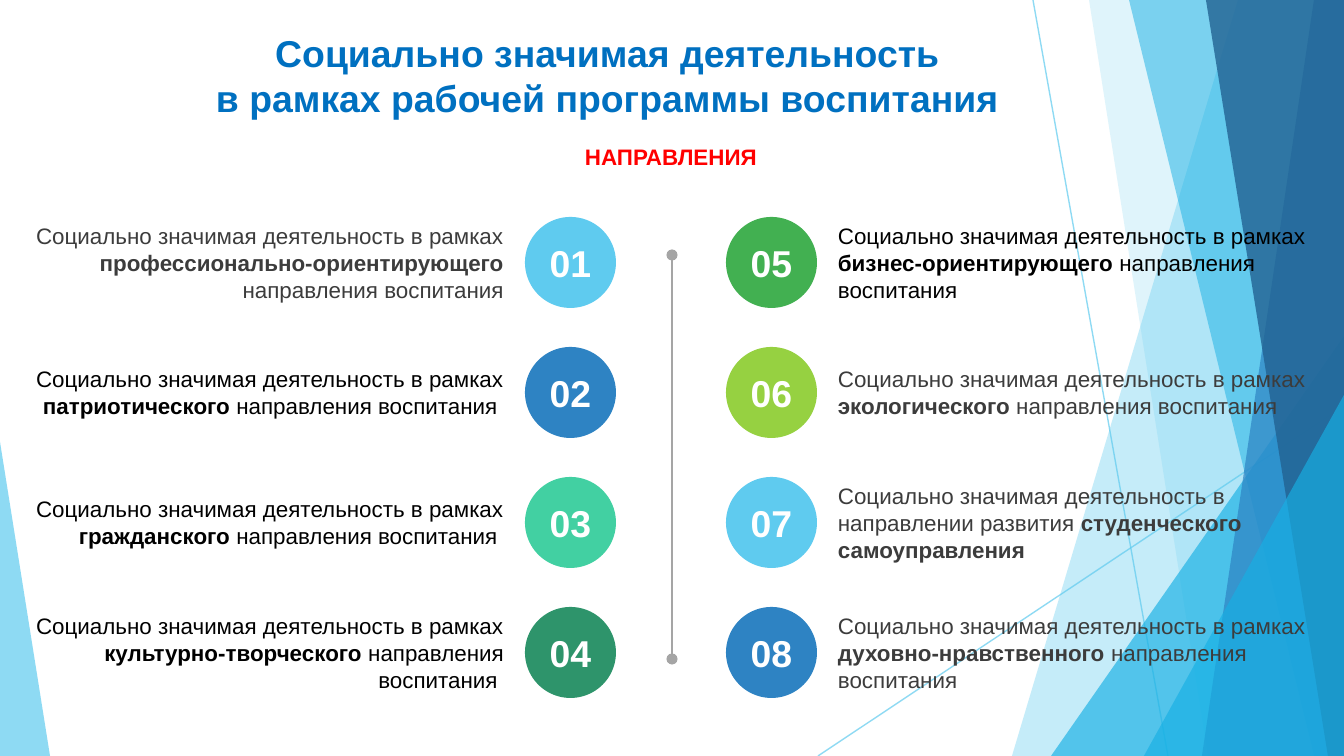
from lxml.etree import SubElement
from pptx import Presentation
from pptx.dml.color import RGBColor
from pptx.enum.shapes import MSO_CONNECTOR, MSO_SHAPE
from pptx.enum.text import MSO_ANCHOR, PP_ALIGN as ALIGN
from pptx.oxml.ns import qn
from pptx.util import Emu, Pt

SKY = RGBColor(0x5F, 0xCB, 0xEF)
CYAN = RGBColor(0x17, 0xB0, 0xE4)
BLUE = RGBColor(0x2E, 0x83, 0xC3)
NAVY = RGBColor(0x22, 0x62, 0x92)
MINT = RGBColor(0x42, 0xD0, 0xA2)
PINE = RGBColor(0x2E, 0x94, 0x6B)
GREEN = RGBColor(0x42, 0xB0, 0x51)
LIME = RGBColor(0x96, 0xD1, 0x41)
TITLE_BLUE = RGBColor(0x00, 0x70, 0xC0)
RED = RGBColor(0xFF, 0x00, 0x00)
GRAY = RGBColor(0xA5, 0xA5, 0xA5)
DARK = RGBColor(0x3C, 0x3C, 0x3C)
BLACK = RGBColor(0x00, 0x00, 0x00)
WHITE = RGBColor(0xFF, 0xFF, 0xFF)

WIDTH, HEIGHT = 1344, 756
FONT = "Arial"

TITLE = "Социально значимая деятельность\vв рамках рабочей программы воспитания"
SUBTITLE = "НАПРАВЛЕНИЯ"
LEAD = "Социально значимая деятельность в рамках "
TAIL = " направления воспитания"

# circle colour, text colour, opening words, bold words, closing words
DIRECTIONS = [
    (SKY, DARK, LEAD, "профессионально-ориентирующего", TAIL),
    (BLUE, BLACK, LEAD, "патриотического", TAIL + " "),
    (MINT, BLACK, LEAD, "гражданского", TAIL + " "),
    (PINE, BLACK, LEAD, "культурно-творческого", TAIL + " "),
    (GREEN, BLACK, LEAD, "бизнес-ориентирующего", TAIL),
    (LIME, DARK, LEAD, "экологического", TAIL),
    (SKY, DARK, "Социально значимая деятельность в направлении развития ",
     "студенческого самоуправления", ""),
    (BLUE, DARK, LEAD, "духовно-нравственного", TAIL),
]
ROWS = 4
# circle left, text left, text alignment
COLUMNS = [(525, 28, ALIGN.RIGHT), (726, 838, ALIGN.LEFT)]
CIRCLE, FIRST_TOP, PITCH = 91, 217, 130
TEXT_WIDTH, TEXT_HEIGHT = 476, 82

# Background facets, back to front.
# Bands run from the top edge to the bottom edge: top left, top right, bottom right, bottom left
# Triangles: left, top, width, height, apex position
FACETS = [
    ("band", (1238, WIDTH, WIDTH, 1012), SKY, 36),
    ("band", (1089, WIDTH, WIDTH, 1208), SKY, 20),
    ("triangle", (1051, 336, 293, 420, 1), CYAN, 66),
    ("band", (1129, WIDTH, WIDTH, 1314), CYAN, 50),
    ("band", (1314, WIDTH, WIDTH, 1202), BLUE, 70),
    ("band", (1206, WIDTH, WIDTH, 1328), NAVY, 80),
    ("triangle", (1144, 395, 200, 361, 1), CYAN, 66),
    ("triangle", (0, 442, 50, 314, 0), SKY, 70),
]
FACET_LINES = [(1033, 0, 1168, HEIGHT), (WIDTH, 406, 818, HEIGHT)]


def px(length):
    return Emu(round(length * 914400 / 134.4))


def set_alpha(fill, percent):
    color = fill._xPr.find(qn("a:solidFill"))[0]
    SubElement(color, qn("a:alpha")).set("val", str(percent * 1000))


def paint(shape, color, opacity=100):
    shape.shadow.inherit = False
    shape.fill.solid()
    shape.fill.fore_color.rgb = color
    shape.line.fill.background()
    if opacity < 100:
        set_alpha(shape.fill, opacity)


def add_line(shapes, ends, color, points):
    line = shapes.add_connector(MSO_CONNECTOR.STRAIGHT, *map(px, ends))
    line.line.color.rgb = color
    line.line.width = Pt(points)
    SubElement(line._element.spPr, qn("a:effectLst"))
    return line


def add_facet(shapes, kind, geometry, color, opacity):
    if kind == "triangle":
        *box, apex = geometry
        facet = shapes.add_shape(MSO_SHAPE.ISOSCELES_TRIANGLE, *map(px, box))
        facet.adjustments[0] = apex
    else:
        corners = [(px(x), px(y)) for x, y in zip(geometry, (0, 0, HEIGHT, HEIGHT))]
        builder = shapes.build_freeform(*corners[0])
        builder.add_line_segments(corners[1:], close=True)
        facet = builder.convert_to_shape()
    paint(facet, color, opacity)


def write(shape, parts, size, color, align):
    """Fill the shape with one paragraph made of (text, bold) parts."""
    frame = shape.text_frame
    frame.word_wrap = True
    frame.vertical_anchor = MSO_ANCHOR.MIDDLE
    frame.margin_left = frame.margin_right = frame.margin_top = frame.margin_bottom = 0
    paragraph = frame.paragraphs[0]
    paragraph.alignment = align
    for text, bold in parts:
        if len(parts) == 1:
            paragraph.text = text
            runs = paragraph.runs
        else:
            runs = [paragraph.add_run()]
            runs[0].text = text
        for run in runs:
            run.font.name = FONT
            run.font.size = Pt(size)
            run.font.bold = bold
            run.font.color.rgb = color


def add_text(shapes, box, parts, size, color, align):
    write(shapes.add_textbox(*map(px, box)), parts, size, color, align)


def add_direction(shapes, index, direction):
    fill, color, opening, bold, closing = direction
    column, row = divmod(index, ROWS)
    circle_left, text_left, align = COLUMNS[column]
    top = FIRST_TOP + row * PITCH
    text_top = top + (CIRCLE - TEXT_HEIGHT) / 2
    parts = [(text, text == bold) for text in (opening, bold, closing) if text]
    add_text(shapes, (text_left, text_top, TEXT_WIDTH, TEXT_HEIGHT), parts, 12, color, align)
    circle = shapes.add_shape(MSO_SHAPE.OVAL, *map(px, (circle_left, top, CIRCLE, CIRCLE)))
    paint(circle, fill)
    write(circle, [(f"{index + 1:02}", True)], 20, WHITE, ALIGN.CENTER)


def main():
    deck = Presentation()
    deck.slide_width, deck.slide_height = px(WIDTH), px(HEIGHT)
    shapes = deck.slides.add_slide(deck.slide_layouts[6]).shapes

    for ends in FACET_LINES:
        set_alpha(add_line(shapes, ends, SKY, 0.75).line.fill, 70)
    for facet in FACETS:
        add_facet(shapes, *facet)

    add_text(shapes, (56, 144, 1230, 26), [(SUBTITLE, True)], 12, RED, ALIGN.CENTER)
    add_text(shapes, (56, 28, 1103, 94), [(TITLE, True)], 20, TITLE_BLUE, ALIGN.CENTER)
    for index, direction in enumerate(DIRECTIONS):
        add_direction(shapes, index, direction)

    axis = add_line(shapes, (672, 255, 672, 659), GRAY, 1)
    for end in ("a:headEnd", "a:tailEnd"):
        SubElement(axis.line._ln, qn(end)).set("type", "oval")

    deck.save("out.pptx")


if __name__ == "__main__":
    main()
